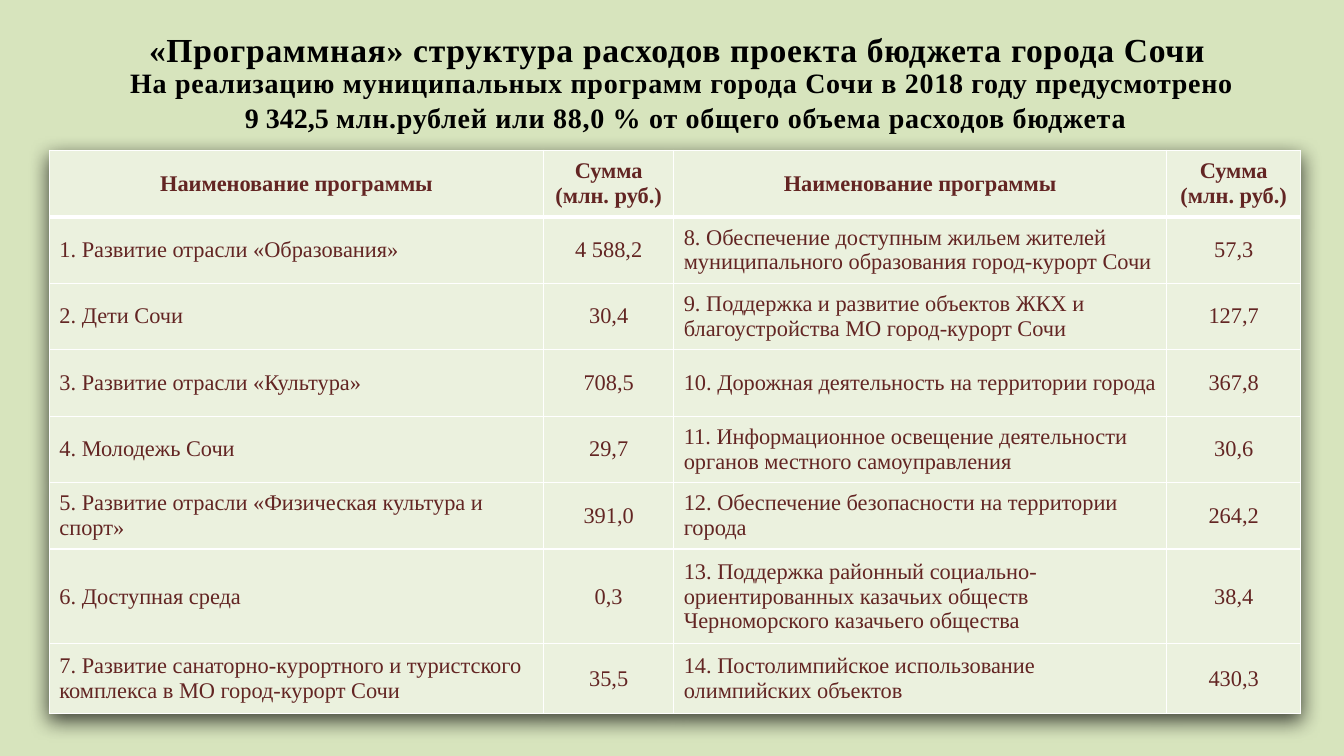
from lxml import etree
from pptx import Presentation
from pptx import util as u
from pptx.dml.color import RGBColor
from pptx.enum import text
from pptx.oxml import ns

FONT = "Times New Roman"
BACKGROUND, CELL, BORDER = "D7E4BD", "EBF1DE", "FFFFFF"
BLACK, MAROON = "000000", "632523"
CENTER, LEFT = text.PP_ALIGN.CENTER, text.PP_ALIGN.LEFT

TITLE = "«Программная» структура расходов проекта бюджета города Сочи"
SUBTITLE = [
    [("На реализацию муниципальных программ города Сочи в 2018 году предусмотрено", 50)],
    [(" ", 50), ("9 342,5 ", 0),
     ("млн.рублей или 88,0 % от общего объема расходов бюджета", 50)],
]
HEADER = ["Наименование программы", "Сумма (млн. руб.)"]
PROGRAMS = [
    ("Развитие отрасли «Образования»", "4 588,2"),
    ("Дети Сочи", "30,4"),
    ("Развитие отрасли «Культура»", "708,5"),
    ("Молодежь Сочи", "29,7"),
    ("Развитие отрасли «Физическая культура и спорт»", "391,0"),
    ("Доступная среда", "0,3"),
    ("Развитие санаторно-курортного и туристского комплекса в МО город-курорт Сочи", "35,5"),
    ("Обеспечение доступным жильем жителей муниципального образования город-курорт Сочи", "57,3"),
    ("Поддержка и развитие объектов ЖКХ и благоустройства МО город-курорт Сочи", "127,7"),
    ("Дорожная деятельность на территории города", "367,8"),
    ("Информационное освещение деятельности органов местного самоуправления", "30,6"),
    ("Обеспечение безопасности на территории города", "264,2"),
    ("Поддержка районный социально-ориентированных казачьих обществ "
     "Черноморского казачьего общества", "38,4"),
    ("Постолимпийское использование олимпийских объектов", "430,3"),
]
COLUMN_WIDTHS = [353, 93, 352, 96]
ROW_HEIGHTS = [47.5] * 6 + [67.7, 49.7]


def color(value):
    """Return the colour for a hex string."""
    return RGBColor.from_string(value)


def apply(target, values):
    """Set each named attribute on the target."""
    for name, value in values.items():
        setattr(target, name, value)


def add_run(paragraph, words, size, ink, bold, spacing=0):
    """Add one formatted run to a paragraph."""
    run = paragraph.add_run()
    run.text = words
    apply(run.font, {"name": FONT, "size": u.Pt(size), "bold": bold})
    run.font.color.rgb = color(ink)
    if spacing:
        run.font._element.set("spc", str(spacing))


def fill_heading(shape, box, lines, size):
    """Place a heading placeholder in its box and write its lines."""
    apply(shape, dict(zip(("left", "top", "width", "height"), map(u.Pt, box))))
    frame = shape.text_frame
    apply(frame, {"word_wrap": True, "auto_size": text.MSO_AUTO_SIZE.NONE,
                  "vertical_anchor": text.MSO_ANCHOR.TOP})
    for index, runs in enumerate(lines):
        paragraph = frame.add_paragraph() if index else frame.paragraphs[0]
        apply(paragraph, {"alignment": CENTER, "line_spacing": 1.05,
                          "space_before": u.Pt(0), "space_after": u.Pt(0)})
        for words, spacing in runs:
            add_run(paragraph, words, size, BLACK, True, spacing)


def set_borders(cell, widths):
    """Draw the left, right, top and bottom borders of a cell."""
    properties = cell._tc.get_or_add_tcPr()
    for index, (side, width) in enumerate(zip("LRTB", widths)):
        line = etree.Element(ns.qn(f"a:ln{side}"), w=str(u.Pt(width)))
        fill = etree.SubElement(line, ns.qn("a:solidFill"))
        etree.SubElement(fill, ns.qn("a:srgbClr"), val=BORDER)
        properties.insert(index, line)


def add_table_shadow(table):
    """Give the table a soft shadow that falls downwards."""
    effects = etree.Element(ns.qn("a:effectLst"))
    shadow = etree.SubElement(effects, ns.qn("a:outerShdw"), blurRad=str(u.Pt(15)),
                              dist=str(u.Pt(5)), dir="5400000", algn="t", rotWithShape="0")
    ink = etree.SubElement(shadow, ns.qn("a:srgbClr"), val=BLACK)
    etree.SubElement(ink, ns.qn("a:alpha"), val="70000")
    table._tbl.tblPr.insert(0, effects)


def add_program_table(slide, left, top):
    """Add the two-column list of programmes with their sums."""
    numbered = [(f"{number}. {name}", amount)
                for number, (name, amount) in enumerate(PROGRAMS, 1)]
    half = len(numbered) // 2
    rows = [HEADER * 2] + [a + b for a, b in zip(numbered[:half], numbered[half:])]
    table = slide.shapes.add_table(
        len(rows), len(COLUMN_WIDTHS), u.Pt(left), u.Pt(top),
        u.Pt(sum(COLUMN_WIDTHS)), u.Pt(sum(ROW_HEIGHTS))).table
    apply(table, {"horz_banding": False})
    for column, width in zip(table.columns, COLUMN_WIDTHS):
        column.width = u.Pt(width)
    for row, height in zip(table.rows, ROW_HEIGHTS):
        row.height = u.Pt(height)
    for r, row in enumerate(rows):
        for c, words in enumerate(row):
            cell = table.cell(r, c)
            cell.vertical_anchor = text.MSO_ANCHOR.MIDDLE
            cell.fill.solid()
            cell.fill.fore_color.rgb = color(CELL)
            set_borders(cell, (1, 1, 3 if r == 1 else 1, 3 if r == 0 else 1))
            paragraph = cell.text_frame.paragraphs[0]
            paragraph.alignment = CENTER if r == 0 or c % 2 else LEFT
            add_run(paragraph, words, 16, MAROON, r == 0)
    add_table_shadow(table)


def build_budget_slide(presentation):
    """Build the slide with both headings and the programme table."""
    slide = presentation.slides.add_slide(presentation.slide_layouts[0])
    slide.background.fill.solid()
    slide.background.fill.fore_color.rgb = color(BACKGROUND)
    title, subtitle = slide.placeholders
    fill_heading(title, (40.3, 15.8, 893.5, 65.5), [[(TITLE + " ", 50)]], 24)
    fill_heading(subtitle, (40.3, 41.8, 893.5, 55.4), SUBTITLE, 20)
    add_program_table(slide, 35.3, 107.3)


def main():
    """Create and save the presentation."""
    presentation = Presentation()
    apply(presentation, {"slide_width": u.Pt(960), "slide_height": u.Pt(540)})
    build_budget_slide(presentation)
    presentation.save("out.pptx")


if __name__ == "__main__":
    main()
